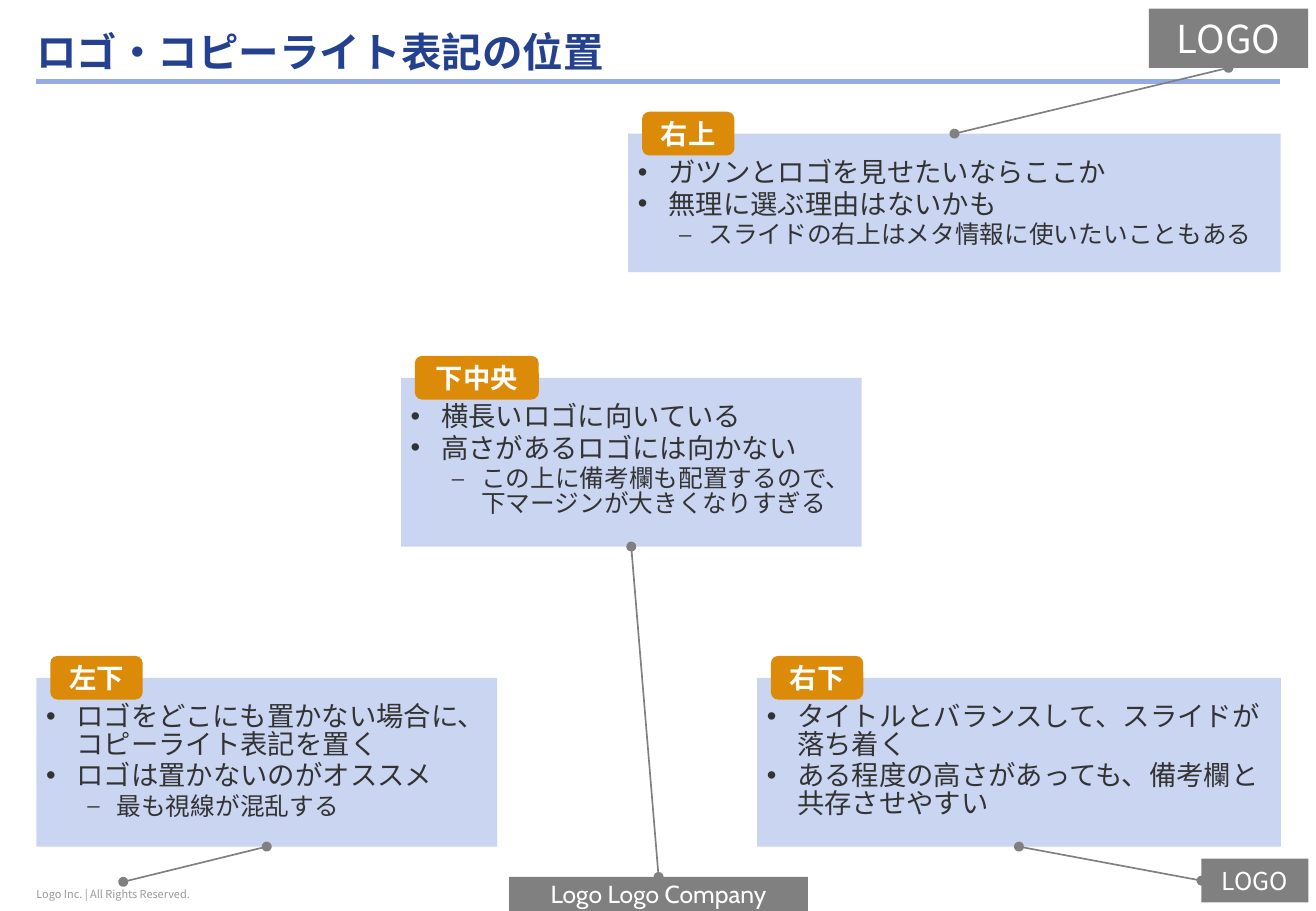
from lxml.etree import SubElement
from pptx import Presentation
from pptx.dml.color import RGBColor
from pptx.enum.shapes import MSO_CONNECTOR as Wire, MSO_SHAPE as Form
from pptx.enum.text import MSO_ANCHOR as Anchor, MSO_AUTO_SIZE as Fit, PP_ALIGN as Align
from pptx.oxml.ns import qn
from pptx.util import Inches, Pt

WIDE, HIGH = Inches(10.83), Inches(7.5)
SIDE = 2.77  # side margin, percent of the width
SANS = "Noto Sans CJK JP"
GREY, WHITE = "808080", "FFFFFF"
TOP, LEFT, BOTTOM = 0, 1, 2  # connection sites

# tag, (left, top, width, height) in percent, [(level, text)]
PANELS = [
    ("右上", (47.74, 14.67, 49.58, 15.2), [
        (0, "ガツンとロゴを見せたいならここか"),
        (0, "無理に選ぶ理由はないかも"),
        (1, "スライドの右上はメタ情報に使いたいこともある")]),
    ("下中央", (30.47, 41.47, 35, 18.53), [
        (0, "横長いロゴに向いている"),
        (0, "高さがあるロゴには向かない"),
        (1, "この上に備考欄も配置するので、下マージンが大きくなりすぎる")]),
    ("左下", (SIDE, 74.4, 35, 18.53), [
        (0, "ロゴをどこにも置かない場合に、\nコピーライト表記を置く"),
        (0, "ロゴは置かないのがオススメ"),
        (1, "最も視線が混乱する")]),
    ("右下", (57.53, 74.4, 39.8, 18.53), [
        (0, "タイトルとバランスして、スライドが落ち着く"),
        (0, "ある程度の高さがあっても、備考欄と共存させやすい")]),
]
# level: (size, left margin, hanging indent, bullet)
LEVELS = {0: (16.2, 0.25, -0.25, "•"), 1: (14.6, 0.58, -0.24, "⎯")}


def area(left, top, width, height):
    """Turn percentages of the slide into lengths."""
    return [int(part * full / 100) for part, full in
            zip((left, top, width, height), (WIDE, HIGH, WIDE, HIGH))]


def tint(color, code):
    color.rgb = RGBColor.from_string(code)


def paint(shape, code):
    shape.fill.solid()
    tint(shape.fill.fore_color, code)
    shape.line.fill.background()
    shape.shadow.inherit = False


def place(shape, box):
    shape.left, shape.top, shape.width, shape.height = area(*box)


def frame(shape, pads, anchor):
    """Set insets (left, top, right, bottom), anchor and wrapping."""
    text = shape.text_frame
    text.word_wrap, text.auto_size = True, Fit.NONE
    text.vertical_anchor = anchor
    (text.margin_left, text.margin_top,
     text.margin_right, text.margin_bottom) = map(Inches, pads)
    return text


def write(par, words, size, code, bold=False, face=SANS):
    for num, line in enumerate(words.split("\n")):
        if num:
            par.add_line_break()
        run = par.add_run()
        run.text = line
        font = run.font
        font.size, font.bold, font.name = Pt(size), bold, face
        tint(font.color, code)
        east = SubElement(font._element, qn("a:ea"))
        east.set("typeface", face)


def label(slide, form, box, fill, words, size, bold=False, face=SANS):
    """Add a filled shape with centred white text."""
    shape = slide.shapes.add_shape(form, *area(*box))
    paint(shape, fill)
    par = frame(shape, (0.1, 0.05, 0.1, 0.05), Anchor.MIDDLE).paragraphs[0]
    par.alignment = Align.CENTER
    write(par, words, size, WHITE, bold, face)
    return shape


def item(par, level, words):
    size, margin, indent, mark = LEVELS[level]
    par.level, par.alignment = level, Align.LEFT
    par.line_spacing, par.space_before = 0.84, Pt(2.4)
    props = par._p.get_or_add_pPr()
    props.set("marL", str(Inches(margin)))
    props.set("indent", str(Inches(indent)))
    SubElement(props, qn("a:buChar")).set("char", mark)
    write(par, words, size, "333333")


def panel(holder, box, items):
    place(holder, box)
    paint(holder, "CAD5F2")
    text = frame(holder, (0.08, 0.22, 0.08, 0.04), Anchor.TOP)
    for num, (level, words) in enumerate(items):
        par = text.add_paragraph() if num else text.paragraphs[0]
        item(par, level, words)


def tag(slide, box, words):
    left, top = box[:2]
    spot = (left + 1.05, top - 2.4, 2.22 + 2.4 * len(words), 4.8)
    label(slide, Form.ROUNDED_RECTANGLE, spot, "DB8B08", words, 16.2, True)


def wire(slide, ends, code, width):
    line = slide.shapes.add_connector(Wire.STRAIGHT, *area(*ends))
    tint(line.line.color, code)
    line.line.width = Pt(width)
    SubElement(line._element.spPr, qn("a:effectLst"))
    return line


def join(slide, start, first, end, last):
    """Link two shapes with a line that has a dot at each end."""
    line = wire(slide, (0, 0, 0, 0), GREY, 1)
    line.begin_connect(start, first)
    line.end_connect(end, last)
    for name in ("a:headEnd", "a:tailEnd"):
        SubElement(line.line._get_or_add_ln(), qn(name)).set("type", "oval")


def head(slide):
    title = slide.shapes.title
    place(title, (SIDE, 3.33, 94.5, 5.2))
    par = frame(title, (0, 0, 0.1, 0), Anchor.MIDDLE).paragraphs[0]
    par.alignment, par.line_spacing = Align.LEFT, 0.9
    write(par, "ロゴ・コピーライト表記の位置", 24, "244190", True)
    wire(slide, (SIDE, 8.93, 100 - SIDE, 8.93), "95ABE5", 3)


def rights(slide):
    box = slide.shapes.add_textbox(*area(SIDE, 96.8, 13.2, 2.8))
    par = frame(box, (0, 0.05, 0.1, 0.05), Anchor.TOP).paragraphs[0]
    write(par, "Logo Inc. | All Rights Reserved.", 6.5, "999999")
    return box


def main():
    deck = Presentation()
    deck.slide_width, deck.slide_height = WIDE, HIGH
    slide = deck.slides.add_slide(deck.slide_layouts[4])
    head(slide)
    bodies = list(slide.placeholders)[1:]
    for body, (_, box, items) in zip(bodies, PANELS):
        panel(body, box, items)

    rect = Form.RECTANGLE
    large = label(slide, rect, (87.3, 0.95, 12.1, 6.5), GREY, "LOGO", 22.8)
    wide = label(slide, rect, (38.69, 96.27, 22.71, 3.73), GREY,
                 "Logo Logo Company", 14.6, face="Cabin")
    small = label(slide, rect, (91.3, 94.27, 8.13, 4.8), GREY, "LOGO", 14.6)
    marks = [(large, BOTTOM), (wide, TOP), (rights(slide), TOP), (small, LEFT)]
    for body, site, mark in zip(bodies, (TOP, BOTTOM, BOTTOM, BOTTOM), marks):
        join(slide, body, site, *mark)
    for words, box, _ in PANELS:
        tag(slide, box, words)
    deck.save("out.pptx")


if __name__ == "__main__":
    main()
